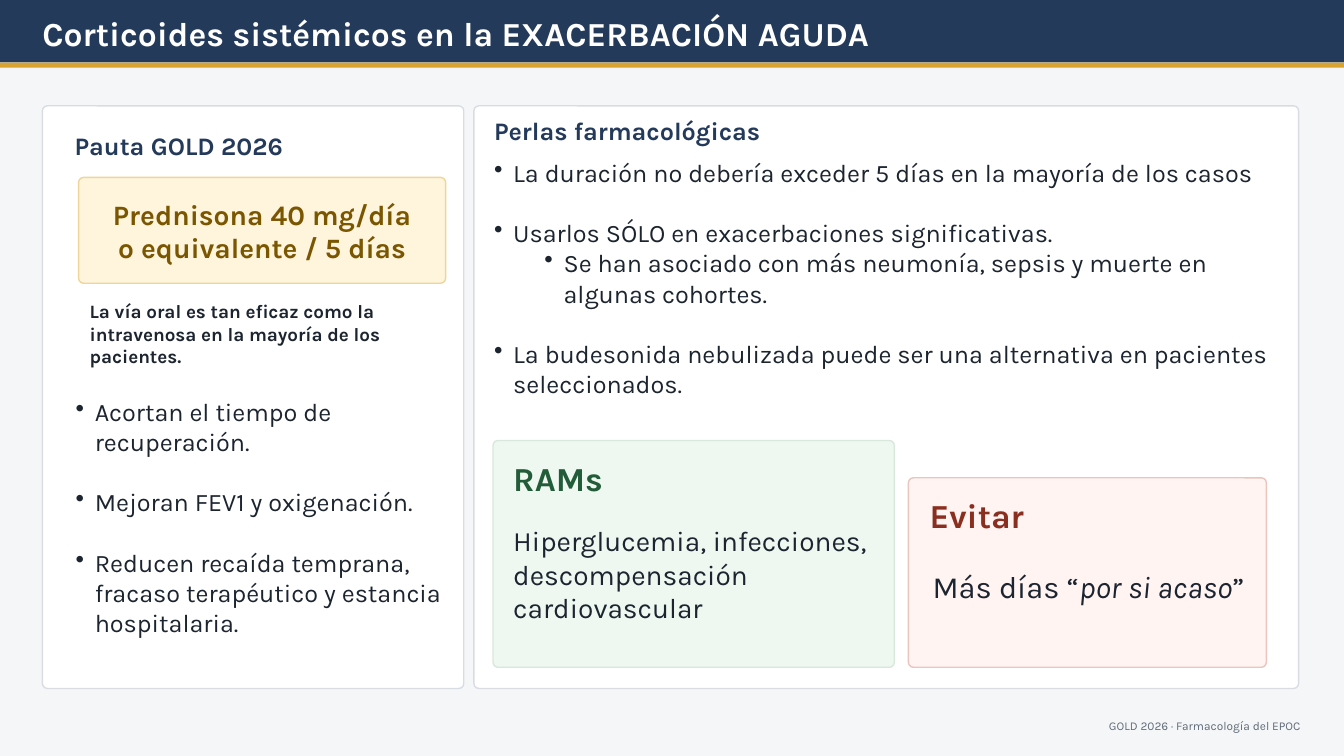
from lxml import etree
from pptx import Presentation
from pptx import util as u
from pptx.dml.color import RGBColor
from pptx.enum import shapes, text
from pptx.oxml.ns import qn

PX = 9144  # EMU per px, 100 px to the inch
WIDTH, HEIGHT = 1333, 750
COLORS = {
    "bg": "F5F6F7", "navy": "243A5A", "gold": "D8A32F", "white": "FFFFFF",
    "ink": "1C2430", "grey": "5F6B78", "border": "D9DDE3",
    "amber": "FFF5DC", "amber_line": "EFD59A", "amber_text": "7A5600",
    "green": "EEF8F1", "green_line": "D9E8DC", "green_text": "235C39",
    "red": "FFF4F1", "red_line": "E9C5BE", "red_text": "8A2E1F",
}
LEFT, CENTER, RIGHT = (text.PP_ALIGN.LEFT, text.PP_ALIGN.CENTER,
                       text.PP_ALIGN.RIGHT)


def rgb(name):
    return RGBColor.from_string(COLORS[name])


class Deck:
    font = "Karla"
    bullet_indent = 19
    level_indent = 50
    radius = 5

    def __init__(self):
        self.prs = Presentation()
        self.prs.slide_width = WIDTH * PX
        self.prs.slide_height = HEIGHT * PX
        self.slide = self.prs.slides.add_slide(self.prs.slide_layouts[6])
        fill = self.slide.background.fill
        fill.solid()
        fill.fore_color.rgb = rgb("bg")

    def shape(self, kind, box, fill, line=None):
        sp = self.slide.shapes.add_shape(kind, *(v * PX for v in box))
        sp.shadow.inherit = False
        sp.fill.solid()
        sp.fill.fore_color.rgb = rgb(fill)
        if line:
            sp.line.color.rgb = rgb(line)
            sp.line.width = u.Pt(1)
        else:
            sp.line.fill.background()
        return sp

    def bar(self, box, fill):
        self.shape(shapes.MSO_SHAPE.RECTANGLE, box, fill)

    def card(self, box, fill, line):
        sp = self.shape(shapes.MSO_SHAPE.ROUNDED_RECTANGLE, box, fill, line)
        sp.adjustments[0] = self.radius / min(box[2:])

    def frame(self, box, anchor):
        tf = self.slide.shapes.add_textbox(*(v * PX for v in box)).text_frame
        fmt = {"word_wrap": True, "vertical_anchor": anchor,
               "margin_left": 0, "margin_top": 0,
               "margin_right": 0, "margin_bottom": 0}
        for name, value in fmt.items():
            setattr(tf, name, value)
        return tf

    def run(self, p, words, size, color, **style):
        r = p.add_run()
        r.text = words
        r.font.color.rgb = rgb(color)
        fmt = {"name": self.font, "size": u.Pt(size), **style}
        for name, value in fmt.items():
            setattr(r.font, name, value)

    def label(self, box, lines, size, color, bold=False, align=LEFT):
        """Each line is a list of (words, italic) runs or a plain string."""
        tf = self.frame(box, text.MSO_ANCHOR.MIDDLE)
        for i, line in enumerate(lines):
            p = tf.add_paragraph() if i else tf.paragraphs[0]
            p.alignment = align
            runs = [(line, False)] if isinstance(line, str) else line
            for words, italic in runs:
                self.run(p, words, size, color, bold=bold, italic=italic)

    def bullets(self, box, items, size=18, gap=21.5):
        """Items are (level, words); a gap precedes each top-level item."""
        tf = self.frame(box, text.MSO_ANCHOR.TOP)
        for i, (level, words) in enumerate(items):
            p = tf.add_paragraph() if i else tf.paragraphs[0]
            pPr = p._p.get_or_add_pPr()
            indent = self.bullet_indent
            pPr.set("marL", str((indent + level * self.level_indent) * PX))
            pPr.set("indent", str(-indent * PX))
            etree.SubElement(pPr, qn("a:buChar")).set("char", "•")
            p.level = level
            if i and level == 0:
                p.space_before = u.Pt(gap)
            self.run(p, words, size, "ink")


def main():
    d = Deck()

    # Header and footer
    d.bar((0, 0, WIDTH, 62), "navy")
    d.label((42, 12, 1268, 42),
            ["Corticoides sistémicos en la EXACERBACIÓN AGUDA"],
            24, "white", bold=True)
    d.bar((0, 62, WIDTH, 5), "gold")
    d.label((1020, 712, 270, 16), ["GOLD 2026 · Farmacología del EPOC"],
            8.5, "grey", align=RIGHT)

    # Left panel: regimen
    d.card((42, 105, 418, 578), "white", "border")
    d.label((74, 135, 230, 18), ["Pauta GOLD 2026"], 18, "navy", bold=True)
    d.card((78, 176, 364, 105), "amber", "amber_line")
    d.label((89, 198, 342, 62),
            ["Prednisona 40 mg/día", "o equivalente / 5 días"],
            20, "amber_text", bold=True, align=CENTER)
    d.label((89, 310, 360, 42),
            ["La vía oral es tan eficaz como la intravenosa en la mayoría "
             "de los pacientes."], 13.5, "ink", bold=True)
    d.bullets((75, 393, 376, 255), [
        (0, "Acortan el tiempo de recuperación."),
        (0, "Mejoran FEV1 y oxigenación."),
        (0, "Reducen recaída temprana, fracaso terapéutico y estancia "
            "hospitalaria."),
    ])

    # Right panel: pharmacological pearls
    d.card((470, 105, 818, 578), "white", "border")
    d.label((490, 120, 300, 18), ["Perlas farmacológicas"],
            18, "navy", bold=True)
    d.bullets((490, 156, 770, 170), [
        (0, "La duración no debería exceder 5 días en la mayoría de los "
            "casos"),
        (0, "Usarlos SÓLO en exacerbaciones significativas."),
        (1, "Se han asociado con más neumonía, sepsis y muerte en algunas "
            "cohortes."),
        (0, "La budesonida nebulizada puede ser una alternativa en "
            "pacientes seleccionados."),
    ])

    # Adverse reactions
    d.card((489, 437, 398, 225), "green", "green_line")
    d.label((509, 466, 140, 16), ["RAMs"], 24, "green_text", bold=True)
    d.label((509, 504, 361, 131),
            ["Hiperglucemia, infecciones, descompensación cardiovascular"],
            20, "ink")

    # What to avoid
    d.card((901, 474, 355, 188), "red", "red_line")
    d.label((922, 503, 130, 16), ["Evitar"], 24, "red_text", bold=True)
    d.label((925, 528, 321, 107),
            [[("Más días “", False), ("por si acaso", True), ("”", False)]],
            22, "ink")

    d.prs.save("out.pptx")


if __name__ == "__main__":
    main()
